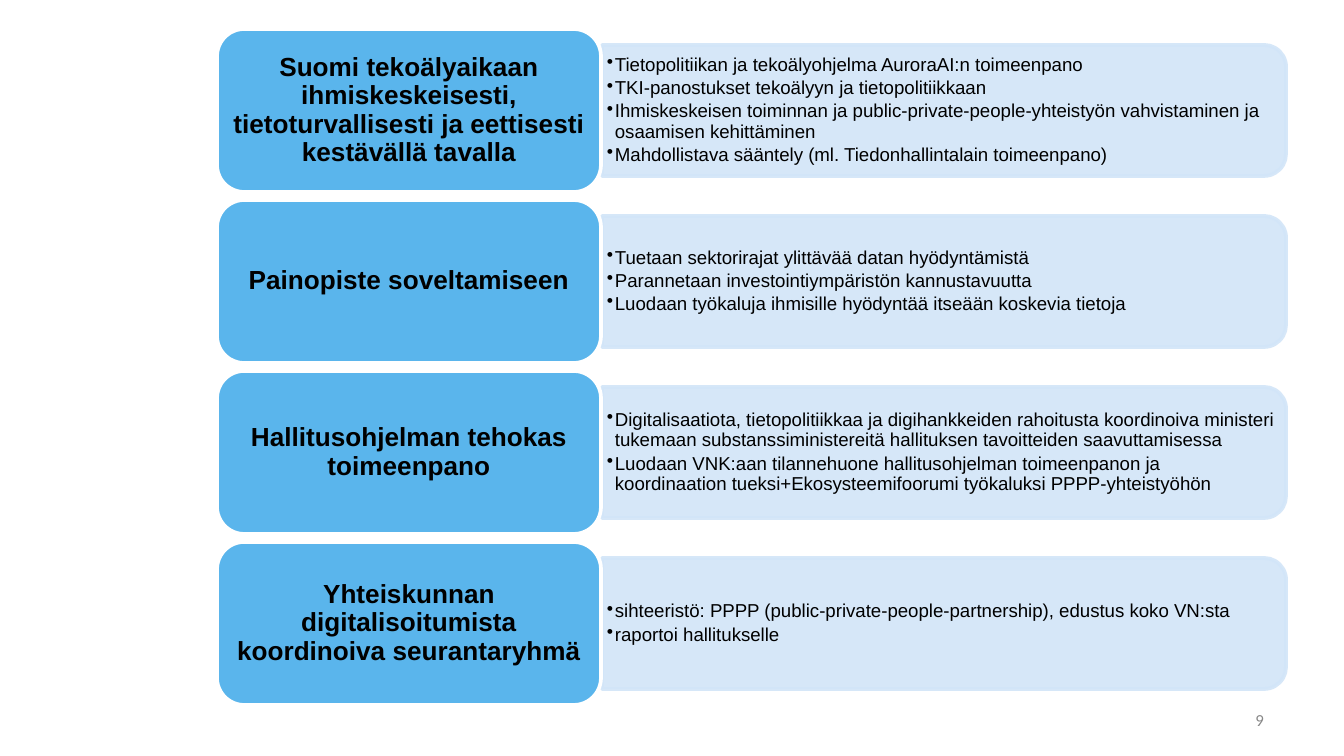
import dataclasses

import lxml.etree
import pptx
import pptx.dml.color
import pptx.enum.shapes
import pptx.enum.text
import pptx.oxml.ns
import pptx.util

SHAPE = pptx.enum.shapes.MSO_SHAPE
ALIGN = pptx.enum.text.PP_ALIGN
MIDDLE = pptx.enum.text.MSO_ANCHOR.MIDDLE
SCALE = 914400 / 134.4

ROWS = [
    ("Suomi tekoälyaikaan ihmiskeskeisesti, tietoturvallisesti ja eettisesti kestävällä tavalla", [
        "Tietopolitiikan ja tekoälyohjelma AuroraAI:n toimeenpano",
        "TKI-panostukset tekoälyyn ja tietopolitiikkaan",
        "Ihmiskeskeisen toiminnan ja public-private-people-yhteistyön vahvistaminen ja osaamisen kehittäminen",
        "Mahdollistava sääntely (ml. Tiedonhallintalain toimeenpano)",
    ]),
    ("Painopiste soveltamiseen", [
        "Tuetaan sektorirajat ylittävää datan hyödyntämistä",
        "Parannetaan investointiympäristön kannustavuutta",
        "Luodaan työkaluja ihmisille hyödyntää itseään koskevia tietoja",
    ]),
    ("Hallitusohjelman tehokas toimeenpano", [
        "Digitalisaatiota, tietopolitiikkaa ja digihankkeiden rahoitusta koordinoiva ministeri "
        "tukemaan substanssiministereitä hallituksen tavoitteiden saavuttamisessa",
        "Luodaan VNK:aan tilannehuone hallitusohjelman toimeenpanon ja koordinaation "
        "tueksi+Ekosysteemifoorumi työkaluksi PPPP-yhteistyöhön",
    ]),
    ("Yhteiskunnan digitalisoitumista koordinoiva seurantaryhmä", [
        "sihteeristö: PPPP (public-private-people-partnership), edustus koko VN:sta",
        "raportoi hallitukselle",
    ]),
]


@dataclasses.dataclass
class Theme:
    label: str = "5AB5EC"
    bar: str = "D2E5F8"
    edge: str = "FFFFFF"
    ink: str = "000000"
    muted: str = "888888"
    font: str = "Arial"
    foot: str = "Calibri"
    head: int = 14
    body: int = 10
    small: int = 9
    line: int = 2


def px(n):
    return pptx.util.Emu(round(n * SCALE))


def rgb(color):
    return pptx.dml.color.RGBColor.from_string(color)


class Deck:
    def __init__(self, theme, slide):
        self.theme = theme
        self.slide = slide

    def shape(self, kind, left, top, width, height, fill, line):
        shape = self.slide.shapes.add_shape(
            kind, px(left), px(top), px(width), px(height))
        shape.shadow.inherit = False
        shape.fill.solid()
        shape.fill.fore_color.rgb = rgb(fill)
        shape.line.color.rgb = rgb(line)
        shape.line.width = pptx.util.Pt(self.theme.line)
        return shape

    def box(self, left, top, width, height):
        return self.slide.shapes.add_textbox(
            px(left), px(top), px(width), px(height)).text_frame

    def frame(self, frame, side, edge):
        frame.word_wrap = True
        frame.vertical_anchor = MIDDLE
        frame.margin_left = frame.margin_right = px(side)
        frame.margin_top = frame.margin_bottom = px(edge)

    def style(self, para, font, size, color, bold=False):
        for run in para.runs:
            run.font.name = font
            run.font.size = pptx.util.Pt(size)
            run.font.bold = bold
            run.font.color.rgb = rgb(color)

    def bar(self, left, mid, width, height):
        shape = self.shape(
            SHAPE.ROUND_2_SAME_RECTANGLE, left + (width - height) / 2, mid - width / 2,
            height, width, self.theme.bar, self.theme.bar)
        shape.rotation = 90
        qn = pptx.oxml.ns.qn
        for color in shape.element.spPr.iter(qn("a:srgbClr")):
            lxml.etree.SubElement(color, qn("a:alpha"), val="90000")

    def bullets(self, left, mid, width, height, items):
        frame = self.box(left, mid - height / 2, width, height)
        self.frame(frame, 5, 3)
        frame.text = "\n".join(items)
        qn = pptx.oxml.ns.qn
        for para in frame.paragraphs:
            para.level = 1
            props = para._p.get_or_add_pPr()
            props.set("marL", str(px(8)))
            props.set("indent", str(px(-8)))
            lxml.etree.SubElement(props, qn("a:buChar"), char="•")
            para.line_spacing = 0.9
            para.space_after = pptx.util.Pt(1.6)
            self.style(para, self.theme.font, self.theme.body, self.theme.ink)

    def label(self, left, top, width, height, text):
        shape = self.shape(SHAPE.ROUNDED_RECTANGLE, left, top, width, height,
                           self.theme.label, self.theme.edge)
        self.frame(shape.text_frame, 7, 4)
        shape.text_frame.text = text
        para = shape.text_frame.paragraphs[0]
        para.alignment = ALIGN.CENTER
        para.line_spacing = 0.9
        self.style(para, self.theme.font, self.theme.head, self.theme.ink, True)

    def number(self, left, top, width, height, text):
        frame = self.box(left, top, width, height)
        self.frame(frame, 13, 7)
        frame.text = text
        para = frame.paragraphs[0]
        para.alignment = ALIGN.RIGHT
        self.style(para, self.theme.foot, self.theme.small, self.theme.muted)


def main():
    show = pptx.Presentation()
    show.slide_width, show.slide_height = px(1344), px(756)
    deck = Deck(Theme(), show.slides.add_slide(show.slide_layouts[6]))
    deck.number(964, 700, 313, 40, "9")
    tall, pitch = 163, 171
    for i, (title, items) in enumerate(ROWS):
        top = 29 + i * pitch
        mid = top + tall / 2
        deck.bar(602, mid, 684, 131)
        deck.bullets(602, mid, 677, 118, items)
        deck.label(217, top, 384, tall, title)
    show.save("out.pptx")


if __name__ == "__main__":
    main()
